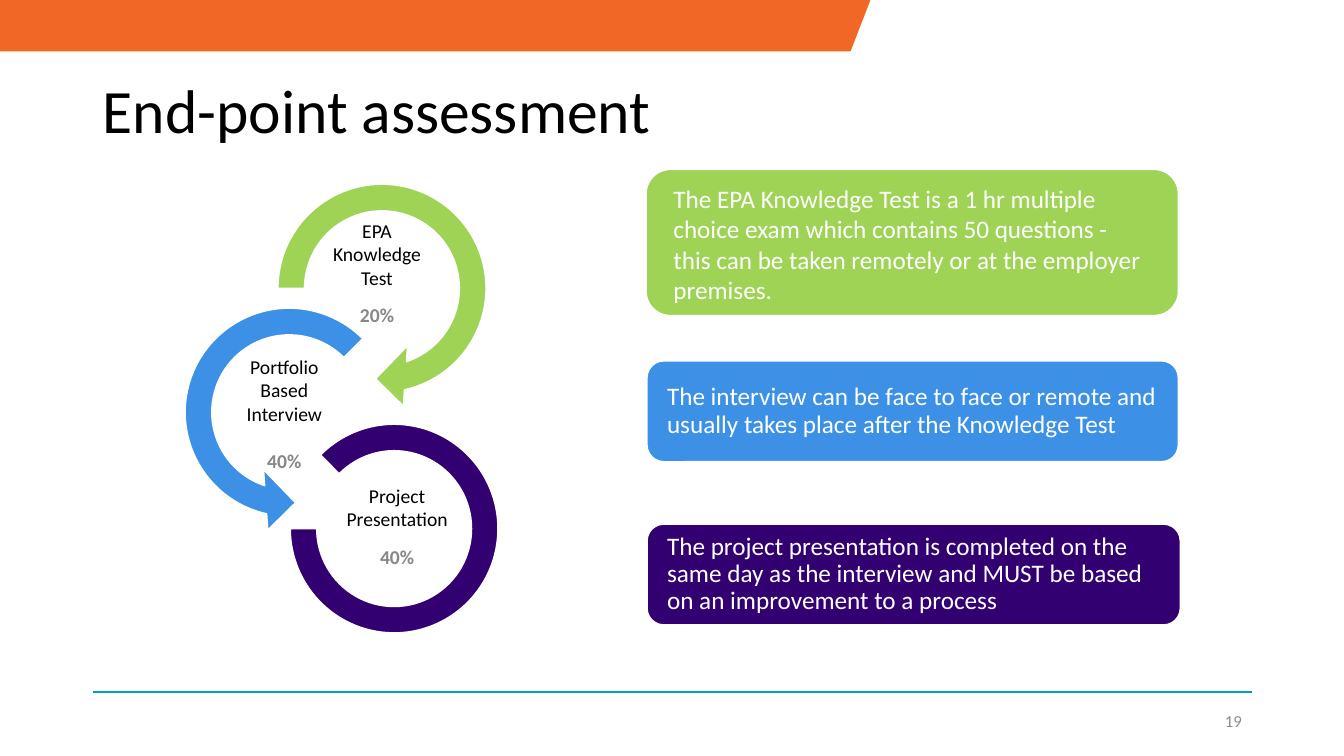
from dataclasses import dataclass

from lxml.etree import SubElement
from pptx import Presentation
from pptx.dml.color import RGBColor
from pptx.enum.shapes import MSO_CONNECTOR, MSO_SHAPE
from pptx.enum.text import MSO_ANCHOR, MSO_AUTO_SIZE, PP_ALIGN
from pptx.oxml.ns import qn
from pptx.util import Pt


@dataclass(frozen=True)
class Theme:
    font: str = "Calibri"
    black: str = "000000"
    white: str = "FFFFFF"
    grey: str = "878787"
    number_grey: str = "8C8C8C"
    orange: str = "F16726"
    teal: str = "04A1AA"
    green: str = "9FD356"
    blue: str = "3C91E6"
    purple: str = "330072"
    title_size: float = 44
    body_size: float = 18
    caption_size: float = 14
    number_size: float = 12


THEME = Theme()

# shape, box, adjustments, colour
RINGS = [
    (MSO_SHAPE.CIRCULAR_ARROW, (186.5, 119.5, 172.8, 172.8),
     (0.11, 11.42, 45, 108, 0.125), THEME.green),
    (MSO_SHAPE.LEFT_CIRCULAR_ARROW, (120.2, 208.1, 172.8, 172.8),
     (0.11, 11.42, 63, 189, 0.125), THEME.blue),
    (MSO_SHAPE.BLOCK_ARC, (207.4, 303.1, 148.3, 149), (135, 108, 0.127), THEME.purple),
]

# name, weight, box, gap between them
CAPTIONS = [
    ("EPA Knowledge Test", "20%", (226.8, 152.6, 85, 85), 9.8),
    ("Portfolio Based Interview", "40%", (160.6, 249.8, 85, 92), 17),
    ("Project Presentation", "40%", (232.6, 342, 102.2, 67.7), 9.8),
]

GREEN_TEXT = ("The EPA Knowledge Test is a 1 hr multiple choice exam which contains "
              "50 questions - this can be taken remotely or at the employer premises.")
BLUE_TEXT = ("The interview can be face to face or remote and usually takes place "
             "after the Knowledge Test")
PURPLE_TEXT = ("The project presentation is completed on the same day as the interview "
               "and MUST be based on an improvement to a process")

# text, box, colour, anchor, line spacing, insets
CARDS = [
    (GREEN_TEXT, (461.5, 121, 380.2, 104.4), THEME.green,
     MSO_ANCHOR.TOP, 1, (14.4, 5, 16.5, 0)),
    (BLUE_TEXT, (462.2, 257.8, 379.5, 72), THEME.blue,
     MSO_ANCHOR.MIDDLE, 0.9, (10.8, 0, 10.8, 0)),
    (PURPLE_TEXT, (462.2, 374.4, 380.9, 72), THEME.purple,
     MSO_ANCHOR.MIDDLE, 0.9, (10.8, 0, 10.8, 0)),
]


class SlideBuilder:
    def __init__(self, slide, theme):
        self.slide = slide
        self.theme = theme

    def format_paragraph(self, paragraph, size, colour, align=PP_ALIGN.LEFT, bold=False):
        paragraph.alignment = align
        for run in paragraph.runs:
            run.font.name = self.theme.font
            run.font.size = Pt(size)
            run.font.bold = bold
            run.font.color.rgb = RGBColor.from_string(colour)

    def title(self, text, box):
        shape = self.slide.shapes.title
        shape.left, shape.top, shape.width, shape.height = map(Pt, box)
        frame = shape.text_frame
        frame.text = text
        frame.auto_size = MSO_AUTO_SIZE.NONE
        frame.vertical_anchor = MSO_ANCHOR.MIDDLE
        frame.paragraphs[0].line_spacing = 0.9
        self.format_paragraph(frame.paragraphs[0], self.theme.title_size, self.theme.black)

    def shape(self, kind, box, colour, outline=True, adjustments=()):
        shape = self.slide.shapes.add_shape(kind, *map(Pt, box))
        shape.shadow.inherit = False
        shape.fill.solid()
        shape.fill.fore_color.rgb = RGBColor.from_string(colour)
        if outline:
            shape.line.color.rgb = RGBColor.from_string(self.theme.white)
            shape.line.width = Pt(1)
        else:
            shape.line.fill.background()
        for index, value in enumerate(adjustments):
            shape.adjustments[index] = value
        return shape

    def rule(self, left, right, top, colour):
        line = self.slide.shapes.add_connector(
            MSO_CONNECTOR.STRAIGHT, Pt(left), Pt(top), Pt(right), Pt(top))
        line.line.color.rgb = RGBColor.from_string(colour)
        line.line.width = Pt(1.5)
        SubElement(line._element.spPr, qn("a:effectLst"))

    def text_box(self, text, box):
        frame = self.slide.shapes.add_textbox(*map(Pt, box)).text_frame
        frame.word_wrap = True
        frame.text = text
        return frame

    def slide_number(self, number, box):
        frame = self.text_box(number, box)
        frame.vertical_anchor = MSO_ANCHOR.MIDDLE
        self.format_paragraph(frame.paragraphs[0], self.theme.number_size,
                              self.theme.number_grey, PP_ALIGN.RIGHT)

    def caption(self, name, weight, box, gap):
        frame = self.text_box(name, box)
        self.format_paragraph(frame.paragraphs[0], self.theme.caption_size,
                              self.theme.black, PP_ALIGN.CENTER)
        paragraph = frame.add_paragraph()
        paragraph.text = weight
        paragraph.space_before = Pt(gap)
        self.format_paragraph(paragraph, self.theme.caption_size,
                              self.theme.grey, PP_ALIGN.CENTER, bold=True)

    def card(self, text, box, colour, anchor, line_spacing, insets):
        frame = self.shape(MSO_SHAPE.ROUNDED_RECTANGLE, box, colour).text_frame
        frame.word_wrap = True
        frame.vertical_anchor = anchor
        (frame.margin_left, frame.margin_top,
         frame.margin_right, frame.margin_bottom) = map(Pt, insets)
        frame.text = text
        frame.paragraphs[0].line_spacing = line_spacing
        self.format_paragraph(frame.paragraphs[0], self.theme.body_size, self.theme.white)


def main():
    presentation = Presentation()
    presentation.slide_width, presentation.slide_height = Pt(960), Pt(540)
    slide = presentation.slides.add_slide(presentation.slide_layouts[5])
    builder = SlideBuilder(slide, THEME)

    builder.shape(MSO_SHAPE.RECTANGLE, (0, 0, 622, 36.7), THEME.orange, outline=False)
    builder.shape(MSO_SHAPE.ISOSCELES_TRIANGLE, (599, 0, 46.8, 60.5), THEME.white)
    builder.rule(66.2, 894.2, 494.6, THEME.teal)
    builder.title("End-point assessment", (66.2, 28.8, 650.2, 104.4))
    builder.slide_number("19", (678.2, 500.4, 216, 28.8))

    for kind, box, adjustments, colour in RINGS:
        builder.shape(kind, box, colour, adjustments=adjustments)
    for caption in CAPTIONS:
        builder.caption(*caption)
    for card in CARDS:
        builder.card(*card)

    presentation.save("out.pptx")


if __name__ == "__main__":
    main()
